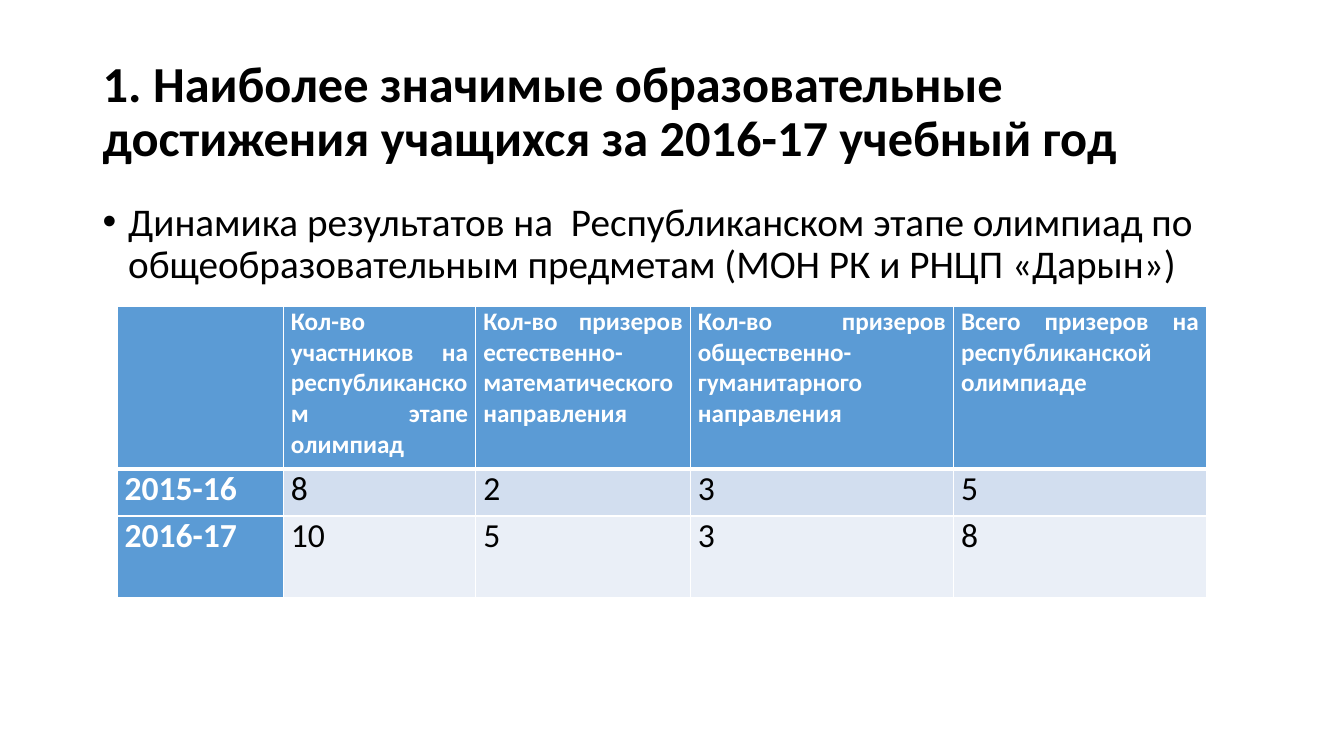
from lxml.etree import SubElement
from pptx import Presentation
from pptx.dml.color import RGBColor
from pptx.enum.text import MSO_ANCHOR, PP_ALIGN
from pptx.oxml import parse_xml
from pptx.oxml.ns import nsdecls, qn
from pptx.util import Cm, Pt

COLORS = {
    "text": "000000",
    "white": "FFFFFF",
    "accent": "5B9BD5",
    "band_dark": "D2DEEF",
    "band_light": "EAEFF7",
}


def set_font(paragraph, size, color, bold=False):
    paragraph.font.name = "Calibri"
    paragraph.font.size = Pt(size)
    paragraph.font.bold = bold
    paragraph.font.color.rgb = RGBColor.from_string(COLORS[color])


def add_text(slide, top, height, text, size, bold, anchor):
    shape = slide.shapes.add_textbox(Cm(2.34), Cm(top), Cm(29.21), Cm(height))
    shape.text_frame.word_wrap = True
    shape.text_frame.vertical_anchor = anchor
    paragraph = shape.text_frame.paragraphs[0]
    paragraph.text = text
    paragraph.line_spacing = 0.9
    set_font(paragraph, size, "text", bold)
    return paragraph


presentation = Presentation()
presentation.slide_width = Cm(33.87)
presentation.slide_height = Cm(19.05)
slide = presentation.slides.add_slide(presentation.slide_layouts[6])

add_text(
    slide, 1.02, 3.68,
    "1. Наиболее значимые образовательные достижения учащихся за 2016-17 учебный год",
    36, True, MSO_ANCHOR.MIDDLE,
)
bullet = add_text(
    slide, 4.98, 12.09,
    "Динамика результатов на  Республиканском этапе олимпиад по "
    "общеобразовательным предметам (МОН РК и РНЦП «Дарын»)",
    28, False, MSO_ANCHOR.TOP,
)
bullet.space_before = Pt(10)
properties = bullet._p.get_or_add_pPr()
properties.set("marL", str(Cm(0.64)))
properties.set("indent", str(-Cm(0.64)))
bullet_font = SubElement(properties, qn("a:buFont"), typeface="Arial")
bullet_mark = SubElement(properties, qn("a:buChar"), char="•")
bullet_font.addnext(bullet_mark)
bullet_mark.addnext(properties.find(qn("a:defRPr")))

rows = [
    [
        "",
        "Кол-во участников на республиканском этапе олимпиад",
        "Кол-во призеров естественно-математического направления",
        "Кол-во призеров общественно-гуманитарного направления",
        "Всего призеров на республиканской олимпиаде",
    ],
    ["2015-16", "8", "2", "3", "5"],
    ["2016-17", "10", "5", "3", "8"],
]
column_widths = [4.19, 4.85, 5.41, 6.63, 6.38]
row_heights = [4.09, 1.19, 2.06]
row_fills = ["accent", "band_dark", "band_light"]

table = slide.shapes.add_table(
    len(rows), len(column_widths), Cm(2.95), Cm(7.72),
    Cm(sum(column_widths)), Cm(sum(row_heights)),
).table
for column, width in zip(table.columns, column_widths):
    column.width = Cm(width)
for row, height in zip(table.rows, row_heights):
    row.height = Cm(height)

for row_index, texts in enumerate(rows):
    for column_index, text in enumerate(texts):
        cell = table.cell(row_index, column_index)
        heading = row_index == 0 or column_index == 0
        cell.margin_left = cell.margin_right = Cm(0.19)
        cell.margin_top = cell.margin_bottom = 0
        cell.fill.solid()
        fill = "accent" if heading else row_fills[row_index]
        cell.fill.fore_color.rgb = RGBColor.from_string(COLORS[fill])
        paragraph = cell.text_frame.paragraphs[0]
        paragraph.text = text
        paragraph.alignment = PP_ALIGN.JUSTIFY
        set_font(paragraph, 18 if row_index == 0 else 24,
                 "white" if heading else "text", heading)
        cell_properties = cell._tc.get_or_add_tcPr()
        for position, side in enumerate("LRTB"):
            thick = (side, row_index) in (("B", 0), ("T", 1))
            cell_properties.insert(position, parse_xml(
                f'<a:ln{side} {nsdecls("a")} w="{Pt(3 if thick else 1)}"><a:solidFill>'
                f'<a:srgbClr val="{COLORS["white"]}"/></a:solidFill></a:ln{side}>'
            ))

presentation.save("out.pptx")
